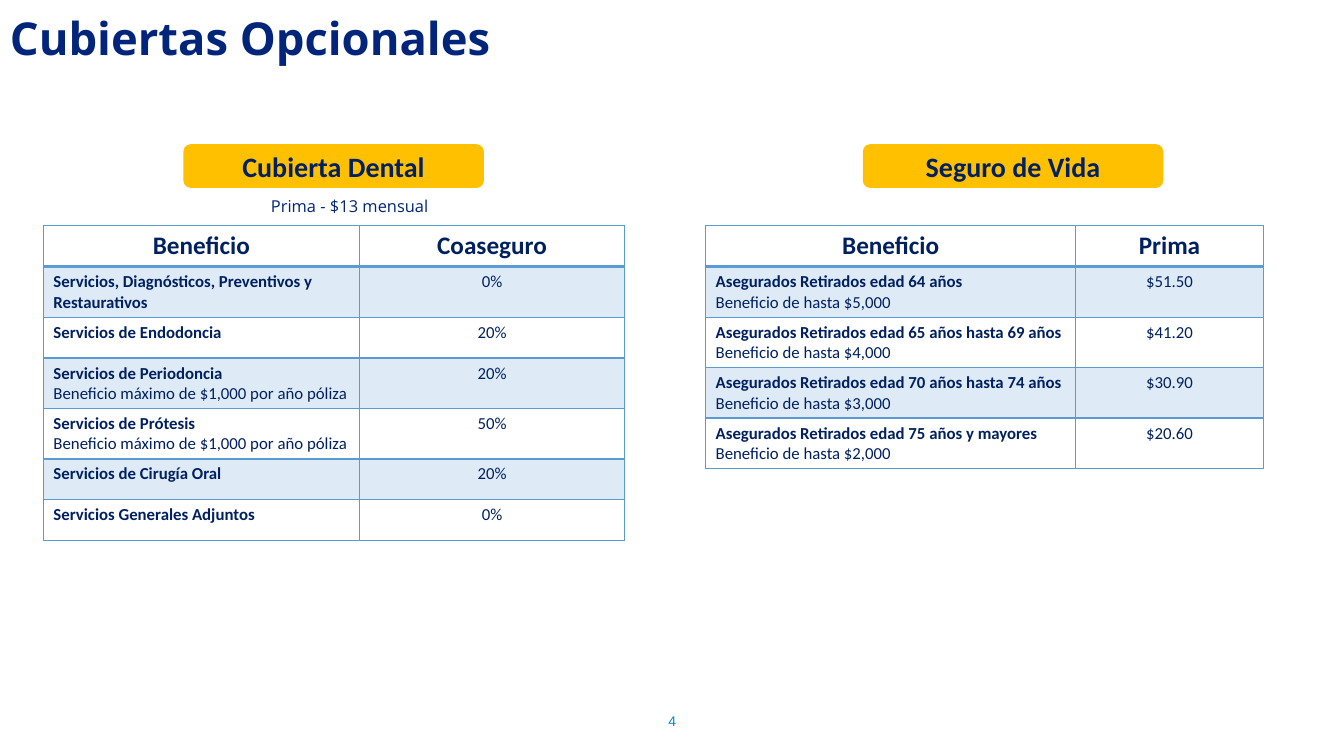
from dataclasses import dataclass

from lxml import etree
from pptx import Presentation
from pptx.dml.color import RGBColor
from pptx.enum import shapes, text
from pptx.oxml import ns
from pptx.util import Pt


@dataclass(frozen=True)
class Theme:
    title: str = "00257A"
    ink: str = "002060"
    badge: str = "FFC000"
    border: str = "5B9BD5"
    band: str = "DEEBF7"
    page: str = "0088CE"
    heading_font: str = "Open Sans"
    body_font: str = "Calibri"
    page_font: str = "Arial"
    title_size: float = 32.4
    badge_size: float = 20
    header_size: float = 18
    body_size: float = 12
    note_size: float = 11.7
    page_size: float = 10


T = Theme()
CENTER = text.PP_ALIGN.CENTER
LEFT = text.PP_ALIGN.LEFT
ROW_HEIGHT = 29.25

DENTAL = [
    (["Servicios, Diagnósticos, Preventivos y Restaurativos"], "0%"),
    (["Servicios de Endodoncia"], "20%"),
    (["Servicios de Periodoncia", "Beneficio máximo de $1,000 por año póliza"], "20%"),
    (["Servicios de Prótesis", "Beneficio máximo de $1,000 por año póliza"], "50%"),
    (["Servicios de Cirugía Oral"], "20%"),
    (["Servicios Generales Adjuntos"], "0%"),
]
LIFE = [
    (["Asegurados Retirados edad 64 años", "Beneficio de hasta $5,000"], "$51.50"),
    (["Asegurados Retirados edad 65 años hasta 69 años", "Beneficio de hasta $4,000"], "$41.20"),
    (["Asegurados Retirados edad 70 años hasta 74 años", "Beneficio de hasta $3,000"], "$30.90"),
    (["Asegurados Retirados edad 75 años y mayores", "Beneficio de hasta $2,000"], "$20.60"),
]


def write(p, words, *, size=T.body_size, font=T.body_font, color=T.ink,
          bold=False, align=LEFT, spacing=None):
    p.alignment = align
    if spacing:
        p.line_spacing = spacing
    r = p.add_run()
    r.text = words
    r.font.size = Pt(size)
    r.font.name = font
    r.font.bold = bold
    r.font.color.rgb = RGBColor.from_string(color)


def add_label(s, box, words, **fmt):
    tf = s.shapes.add_textbox(*map(Pt, box)).text_frame
    tf.word_wrap = True
    tf.vertical_anchor = text.MSO_ANCHOR.MIDDLE
    write(tf.paragraphs[0], words, **fmt)


def add_badge(s, box, words):
    sp = s.shapes.add_shape(shapes.MSO_SHAPE.ROUNDED_RECTANGLE, *map(Pt, box))
    sp.shadow.inherit = False
    sp.fill.solid()
    sp.fill.fore_color.rgb = RGBColor.from_string(T.badge)
    sp.line.fill.background()
    tf = sp.text_frame
    tf.vertical_anchor = text.MSO_ANCHOR.MIDDLE
    write(tf.paragraphs[0], words, size=T.badge_size, bold=True, align=CENTER)


def style_cell(cell, fill=None, bottom=1):
    """Set the borders, then the fill, which must follow them in the XML."""
    tc_pr = cell._tc.get_or_add_tcPr()
    for side, width in (("L", 1), ("R", 1), ("T", 1), ("B", bottom)):
        ln = etree.SubElement(tc_pr, ns.qn(f"a:ln{side}"), w=str(Pt(width)))
        solid = etree.SubElement(ln, ns.qn("a:solidFill"))
        etree.SubElement(solid, ns.qn("a:srgbClr"), val=T.border)
    if fill:
        cell.fill.solid()
        cell.fill.fore_color.rgb = RGBColor.from_string(fill)
    else:
        cell.fill.background()


def add_benefits(s, left, top, widths, headers, rows):
    count = len(rows) + 1
    frame = s.shapes.add_table(count, 2, Pt(left), Pt(top),
                               Pt(sum(widths)), Pt(count * ROW_HEIGHT))
    table = frame.table
    table.first_row = table.horz_banding = False
    for column, width in zip(table.columns, widths):
        column.width = Pt(width)
    for row in table.rows:
        row.height = Pt(ROW_HEIGHT)
    for i, header in enumerate(headers):
        cell = table.cell(0, i)
        style_cell(cell, bottom=2)
        write(cell.text_frame.paragraphs[0], header,
              size=T.header_size, bold=True, align=CENTER)
    for i, (lines, value) in enumerate(rows, 1):
        benefit, amount = table.cell(i, 0), table.cell(i, 1)
        for cell in (benefit, amount):
            style_cell(cell, T.band if i % 2 else None)
        tf = benefit.text_frame
        for j, line in enumerate(lines):
            p = tf.add_paragraph() if j else tf.paragraphs[0]
            write(p, line, bold=j == 0)
        write(amount.text_frame.paragraphs[0], value, align=CENTER)


def add_coverage(s, left, top, badge_indent, name, widths, headers, rows, note=None):
    """Place a badge, an optional premium note and the benefits table."""
    add_badge(s, (left + badge_indent, top, 214.6, 31.2), name)
    if note:
        add_label(s, (left + 155.5, top + 22.4, 200, 45.4), note,
                  size=T.note_size, font=T.heading_font, color=T.title, spacing=0.9)
    add_benefits(s, left, top + 58.3, widths, headers, rows)


def main():
    prs = Presentation()
    prs.slide_width, prs.slide_height = Pt(960), Pt(540)
    s = prs.slides.add_slide(prs.slide_layouts[6])
    add_label(s, (0, 6.5, 828, 45.4), "Cubiertas Opcionales", size=T.title_size,
              font=T.heading_font, color=T.title, bold=True, spacing=0.9)
    add_coverage(s, 31, 103, 100, "Cubierta Dental", (225.7, 189.5),
                 ("Beneficio", "Coaseguro"), DENTAL, "Prima - $13 mensual")
    add_coverage(s, 504, 103, 112.3, "Seguro de Vida", (264.5, 133.8),
                 ("Beneficio", "Prima"), LIFE)
    add_label(s, (446.4, 500.4, 67.7, 28.8), "4", size=T.page_size,
              font=T.page_font, color=T.page, align=CENTER)
    prs.save("out.pptx")


if __name__ == "__main__":
    main()
